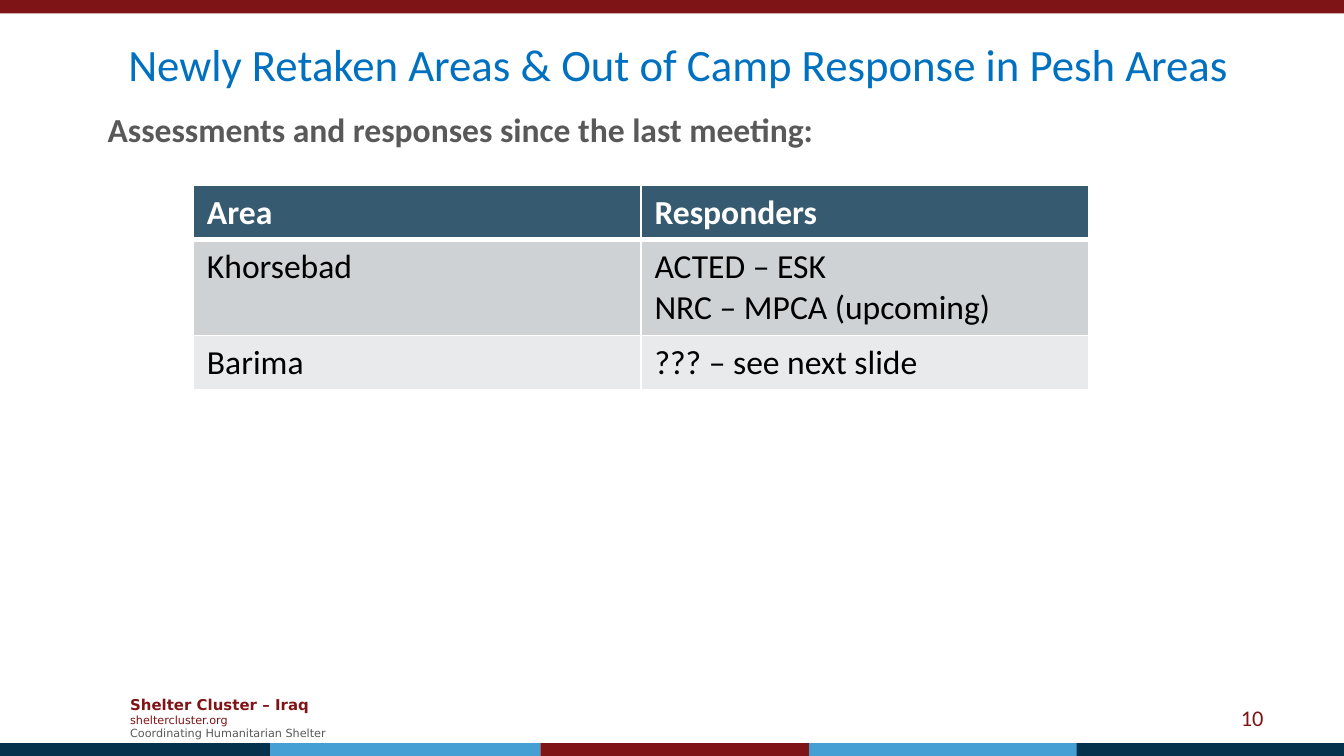
"""Build the slide on newly retaken areas and the out of camp response."""
from dataclasses import dataclass

from lxml import etree
from pptx import Presentation
from pptx.dml.color import RGBColor
from pptx.enum.shapes import MSO_SHAPE
from pptx.enum.text import MSO_ANCHOR, MSO_AUTO_SIZE, PP_ALIGN
from pptx.oxml.ns import qn
from pptx.util import Inches, Pt

RECTANGLE = MSO_SHAPE.RECTANGLE
TOP, MIDDLE = MSO_ANCHOR.TOP, MSO_ANCHOR.MIDDLE
LEFT, CENTER, RIGHT = PP_ALIGN.LEFT, PP_ALIGN.CENTER, PP_ALIGN.RIGHT
NO_AUTOFIT = MSO_AUTO_SIZE.NONE

COLORS = {
    "red": "7F1416",
    "navy": "04314C",
    "sky": "459FD5",
    "title": "0070C0",
    "gray": "595959",
    "header": "365A70",
    "dark_band": "CED2D5",
    "light_band": "E8EAEB",
    "white": "FFFFFF",
    "black": "000000",
}
STRIPES = [(0, "navy"), (2.01, "sky"), (4.02, "red"), (6.02, "sky"), (8.01, "navy")]
BAR_HEIGHT = 0.1
STRIPE_WIDTH = 2.01


@dataclass
class Style:
    """Look of a line of text."""
    size: float
    color: str
    bold: bool = False
    font: str = "Calibri"
    align: PP_ALIGN = LEFT


@dataclass
class Row:
    """One table row with its look."""
    cells: tuple[str, str]
    height: float
    fill: str
    style: Style
    top_line: float = 1
    bottom_line: float = 1


CELL_STYLE = Style(18, "black")
ROWS = [
    Row(("Area", "Responders"), 0.4, "header", Style(18, "white", True), bottom_line=3),
    Row(("Khorsebad", "ACTED – ESK\nNRC – MPCA (upcoming)"), 0.68, "dark_band", CELL_STYLE, top_line=3),
    Row(("Barima", "??? – see next slide"), 0.4, "light_band", CELL_STYLE),
]
FOOTER_STYLES = [
    Style(8, "red", True, "DejaVu Sans"),
    Style(6, "red", font="DejaVu Sans"),
    Style(6, "gray", font="DejaVu Sans"),
]


def rgb(name: str) -> RGBColor:
    """Look up a named colour."""
    return RGBColor.from_string(COLORS[name])


def style_paragraph(para, style: Style) -> None:
    """Format a paragraph and its runs."""
    para.alignment = style.align
    para.space_before = Pt(0)
    for span in para.runs:
        span.font.name = style.font
        span.font.size = Pt(style.size)
        span.font.bold = style.bold
        span.font.color.rgb = rgb(style.color)


def fill_box(box, place: tuple, text: str, styles: list[Style], anchor=TOP) -> None:
    """Place a text shape and write one styled paragraph per line."""
    box.left, box.top, box.width, box.height = map(Inches, place)
    frame = box.text_frame
    frame.word_wrap = True
    frame.auto_size = NO_AUTOFIT
    frame.vertical_anchor = anchor
    frame.text = text
    for para, style in zip(frame.paragraphs, styles):
        style_paragraph(para, style)


def add_text(page, place: tuple, text: str, styles: list[Style]) -> None:
    """Add a vertically centred text box."""
    fill_box(page.shapes.add_textbox(*map(Inches, place)), place, text, styles, MIDDLE)


def add_bar(page, left: float, top: float, width: float, color: str) -> None:
    """Add a flat coloured bar."""
    bar = page.shapes.add_shape(RECTANGLE, *map(Inches, (left, top, width, BAR_HEIGHT)))
    bar.shadow.inherit = False
    bar.fill.solid()
    bar.fill.fore_color.rgb = rgb(color)
    bar.line.fill.background()


def remove_bullet(para) -> None:
    """Turn a list paragraph into plain text."""
    properties = para._p.get_or_add_pPr()
    properties.set("marL", "0")
    properties.set("indent", "0")
    etree.SubElement(properties, qn("a:buNone"))


def add_borders(cell, row: Row) -> None:
    """Draw white lines on all sides of a cell."""
    properties = cell._tc.get_or_add_tcPr()
    widths = {"lnL": 1, "lnR": 1, "lnT": row.top_line, "lnB": row.bottom_line}
    for side, width in widths.items():
        line = etree.SubElement(properties, qn(f"a:{side}"), w=str(Pt(width)))
        fill = etree.SubElement(line, qn("a:solidFill"))
        etree.SubElement(fill, qn("a:srgbClr"), val=COLORS["white"])


def add_responders(page) -> None:
    """Add the table of areas and responders."""
    height = sum(row.height for row in ROWS)
    place = map(Inches, (1.44, 1.38, 6.66, height))
    table = page.shapes.add_table(len(ROWS), 2, *place).table
    for row_index, row in enumerate(ROWS):
        table.rows[row_index].height = Inches(row.height)
        for column_index, text in enumerate(row.cells):
            cell = table.cell(row_index, column_index)
            add_borders(cell, row)
            cell.fill.solid()
            cell.fill.fore_color.rgb = rgb(row.fill)
            cell.text_frame.text = text
            for para in cell.text_frame.paragraphs:
                style_paragraph(para, row.style)


def main() -> None:
    """Build and save the deck."""
    deck = Presentation()
    deck.slide_width = Inches(10)
    deck.slide_height = deck.slide_width * 9 // 16
    page = deck.slides.add_slide(deck.slide_layouts[1])
    title, body = page.placeholders[0], page.placeholders[1]

    add_text(page, (0.87, 5.12, 1.73, 0.44),
             "Shelter Cluster – Iraq\nsheltercluster.org\nCoordinating Humanitarian Shelter",
             FOOTER_STYLES)
    add_bar(page, 0, 0, 10, "red")
    for left, color in STRIPES:
        add_bar(page, left, 5.53, STRIPE_WIDTH, color)
    add_text(page, (7.17, 5.19, 2.33, 0.3), "10", [Style(12, "red", align=RIGHT)])

    fill_box(title, (0.59, 0.22, 8.91, 0.5),
             "Newly Retaken Areas & Out of Camp Response in Pesh Areas",
             [Style(24, "title", align=CENTER)])
    fill_box(body, (0.7, 0.76, 8.14, 0.4),
             "Assessments and responses since the last meeting:",
             [Style(18, "gray", True)])
    remove_bullet(body.text_frame.paragraphs[0])
    add_responders(page)
    deck.save("out.pptx")


if __name__ == "__main__":
    main()
